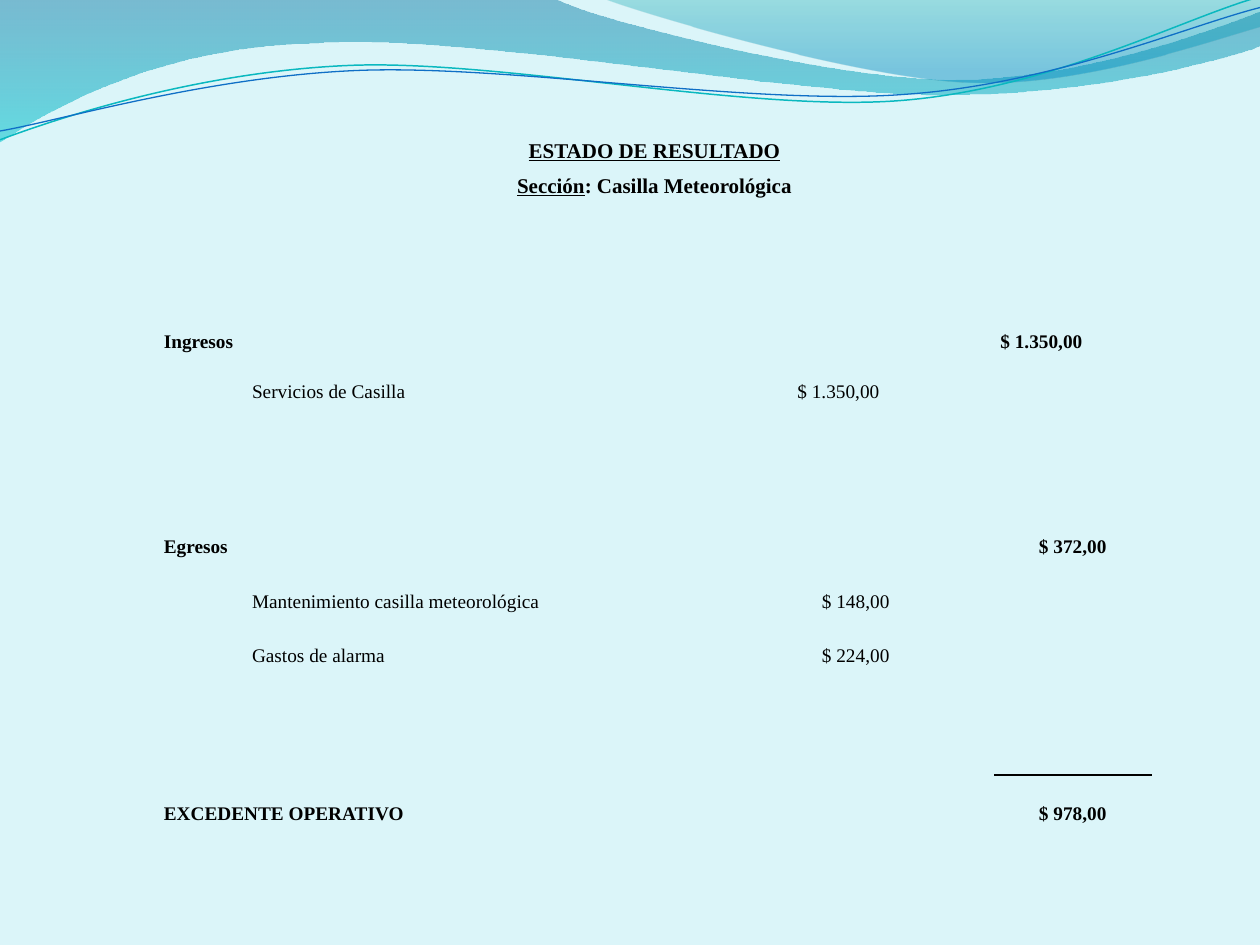
from dataclasses import dataclass

from lxml import etree
from pptx import Presentation
from pptx.dml.color import RGBColor
from pptx.enum import text
from pptx.oxml.ns import qn
from pptx.util import Inches, Pt

BACKGROUND = RGBColor(0xDB, 0xF5, 0xF9)
BLACK = RGBColor(0, 0, 0)
DEEP_BLUE = RGBColor(0x00, 0x74, 0xA1)
AQUA = RGBColor(0x00, 0xC6, 0xCF)
TEAL = RGBColor(0x00, 0xA1, 0xA9)
SEA_BLUE = RGBColor(0x00, 0x8B, 0xBF)
LINE_TEAL = RGBColor(0x0A, 0xB8, 0xBF)
LINE_BLUE = RGBColor(0x0F, 0x6F, 0xC6)
FONT = "Times New Roman"
NO_STYLE = "{2D5ABB26-0587-4C30-8999-92F81FD0307C}"
LEFT, CENTER, RIGHT = text.PP_ALIGN.LEFT, text.PP_ALIGN.CENTER, text.PP_ALIGN.RIGHT


@dataclass
class Stop:
    position: float
    color: RGBColor
    opacity: int


@dataclass
class Band:
    """Filled wave: each segment is an end point or a cubic (two controls, end)."""
    start: tuple
    segments: list
    stops: list


@dataclass
class Wave:
    start: tuple
    segments: list
    color: RGBColor
    width: float


@dataclass
class Entry:
    row: int
    col: int
    words: str
    span: int = 1
    bold: bool = False
    align: text.PP_ALIGN = LEFT
    right: float = 0.05
    before: int = 0


BANDS = [
    Band((0, 0), [
        (4.4, -0.01),
        (4.76, 0.17, 6.64, 0.63, 7.58, 0.63),
        (8.53, 0.63, 9.58, 0.26, 10, 0.09),
        (10.01, 0.36),
        (9.83, 0.44, 8.7, 0.76, 7.46, 0.75),
        (6.22, 0.75, 3.82, 0.28, 2.57, 0.34),
        (1.29, 0.36, 0.46, 0.83, -0.01, 1.13),
    ], [Stop(0, DEEP_BLUE, 45), Stop(1, AQUA, 55)]),
    Band((4.79, -0.01), [
        (5.09, 0.11, 6.82, 0.62, 7.69, 0.65),
        (8.56, 0.69, 9.61, 0.32, 10, 0.21),
        (10, 0),
    ], [Stop(0, TEAL, 30), Stop(0.8, SEA_BLUE, 45)]),
]
WAVES = [
    Wave((0, 1.11), [
        (0.48, 0.93, 1.58, 0.57, 2.77, 0.52),
        (3.95, 0.47, 5.93, 0.89, 7.13, 0.8),
        (8.33, 0.71, 9.38, 0.15, 9.98, -0.02),
    ], LINE_TEAL, 0.85),
    Wave((0, 1.04), [
        (0.47, 0.96, 1.64, 0.61, 2.83, 0.56),
        (4.03, 0.51, 5.97, 0.84, 7.17, 0.75),
        (8.36, 0.67, 9.41, 0.21, 10, 0.06),
    ], LINE_BLUE, 0.75),
]

COLUMNS = [0.7, 2.14, 0.42, 0.82, 0.68, 1.1, 0.78, 1.25]
ROWS = [0.87, 0.4, 0.4, 0.43, 0.4, 0.4, 0.4, 0.43, 0.43, 0.43, 0.43, 0.43, 0.4]
ENTRIES = [
    Entry(3, 0, "Ingresos", span=2, bold=True),
    Entry(3, 7, "$ 1.350,00", bold=True),
    Entry(4, 1, "Servicios de Casilla"),
    Entry(4, 5, "$ 1.350,00", align=RIGHT, right=0.13),
    Entry(7, 0, "Egresos", span=2, bold=True),
    Entry(7, 7, "$ 372,00", bold=True, align=CENTER),
    Entry(8, 1, "Mantenimiento casilla meteorológica", span=4),
    Entry(8, 5, "$ 148,00", align=RIGHT),
    Entry(9, 1, "Gastos de alarma", span=3),
    Entry(9, 5, "$ 224,00", align=RIGHT),
    Entry(12, 0, "EXCEDENTE OPERATIVO", span=2, bold=True, before=6),
    Entry(12, 7, "$ 978,00", bold=True, align=CENTER, before=6),
]


def add_outline(slide, start: tuple, segments: list, close: bool):
    """Draw all points as a polyline, then turn each control triple into a curve."""
    points = [(Inches(seg[i]), Inches(seg[i + 1]))
              for seg in segments for i in range(0, len(seg), 2)]
    builder = slide.shapes.build_freeform(Inches(start[0]), Inches(start[1]))
    builder.add_line_segments(points, close=close)
    sp = builder.convert_to_shape()
    sp.shadow.inherit = False
    lines = iter(list(sp._element.iter(qn("a:lnTo"))))
    for segment in segments:
        first = next(lines)
        if len(segment) == 6:
            curve = etree.Element(qn("a:cubicBezTo"))
            first.addprevious(curve)
            for line in (first, next(lines), next(lines)):
                curve.append(line[0])
                line.getparent().remove(line)
    return sp


def add_band(slide, band: Band) -> None:
    sp = add_outline(slide, band.start, band.segments, close=True)
    sp.line.fill.background()
    sp.fill.gradient()
    sp.fill.gradient_angle = 270
    for gradient_stop, stop in zip(sp.fill.gradient_stops, band.stops):
        gradient_stop.position = stop.position
        gradient_stop.color.rgb = stop.color
    for color, stop in zip(sp._element.spPr.iter(qn("a:srgbClr")), band.stops):
        etree.SubElement(color, qn("a:alpha"), val=str(stop.opacity * 1000))


def add_wave(slide, wave: Wave) -> None:
    sp = add_outline(slide, wave.start, wave.segments, close=False)
    sp.fill.background()
    sp.line.color.rgb = wave.color
    sp.line.width = Pt(wave.width)


def format_cell(cell, size: int, bold: bool, align, right: float = 0.05) -> None:
    cell.vertical_anchor = text.MSO_ANCHOR.BOTTOM
    cell.margin_left, cell.margin_right = Inches(0.05), Inches(right)
    for p in cell.text_frame.paragraphs:
        p.alignment = align
        p.line_spacing = 1.5
        for r in p.runs:
            r.font.name, r.font.size, r.font.bold = FONT, Pt(size), bold
            r.font.color.rgb = BLACK


def add_heading(table) -> None:
    cell = table.cell(0, 0)
    cell.merge(table.cell(0, len(COLUMNS) - 1))
    cell.text_frame.text = "ESTADO DE RESULTADO"
    p = cell.text_frame.add_paragraph()
    p.text = "Sección"
    p.add_run().text = ": Casilla Meteorológica"
    format_cell(cell, 12, True, CENTER)
    for paragraph in cell.text_frame.paragraphs:
        paragraph.runs[0].font.underline = True


def add_entry(table, entry: Entry) -> None:
    cell = table.cell(entry.row, entry.col)
    if entry.span > 1:
        cell.merge(table.cell(entry.row, entry.col + entry.span - 1))
    cell.text_frame.text = entry.words
    format_cell(cell, 11, entry.bold, entry.align, entry.right)
    if entry.before:
        cell.text_frame.paragraphs[0].space_before = Pt(entry.before)


def add_border(cell, side: str) -> None:
    ln = etree.Element(qn(f"a:{side}"), w=str(Pt(1)))
    fill = etree.SubElement(ln, qn("a:solidFill"))
    etree.SubElement(fill, qn("a:srgbClr"), val=str(BLACK))
    cell._tc.get_or_add_tcPr().insert(0, ln)


def add_statement(slide) -> None:
    table = slide.shapes.add_table(len(ROWS), len(COLUMNS), Inches(1.25), Inches(0.7),
                                   Inches(sum(COLUMNS)), Inches(sum(ROWS))).table
    table.first_row = table.horz_banding = False
    table._tbl.tblPr.find(qn("a:tableStyleId")).text = NO_STYLE
    for column, size in zip(table.columns, COLUMNS):
        column.width = Inches(size)
    for row, size in zip(table.rows, ROWS):
        row.height = Inches(size)
    for cell in table.iter_cells():
        cell.fill.background()
        cell.margin_top = cell.margin_bottom = 0
    add_heading(table)
    for entry in ENTRIES:
        add_entry(table, entry)
    add_border(table.cell(11, 7), "lnB")
    add_border(table.cell(12, 7), "lnT")


def main() -> None:
    prs = Presentation()
    prs.slide_width, prs.slide_height = Inches(10), Inches(7.5)
    s = prs.slides.add_slide(prs.slide_layouts[6])
    s.background.fill.solid()
    s.background.fill.fore_color.rgb = BACKGROUND
    for band in BANDS:
        add_band(s, band)
    for wave in WAVES:
        add_wave(s, wave)
    add_statement(s)
    prs.save("out.pptx")


if __name__ == "__main__":
    main()
